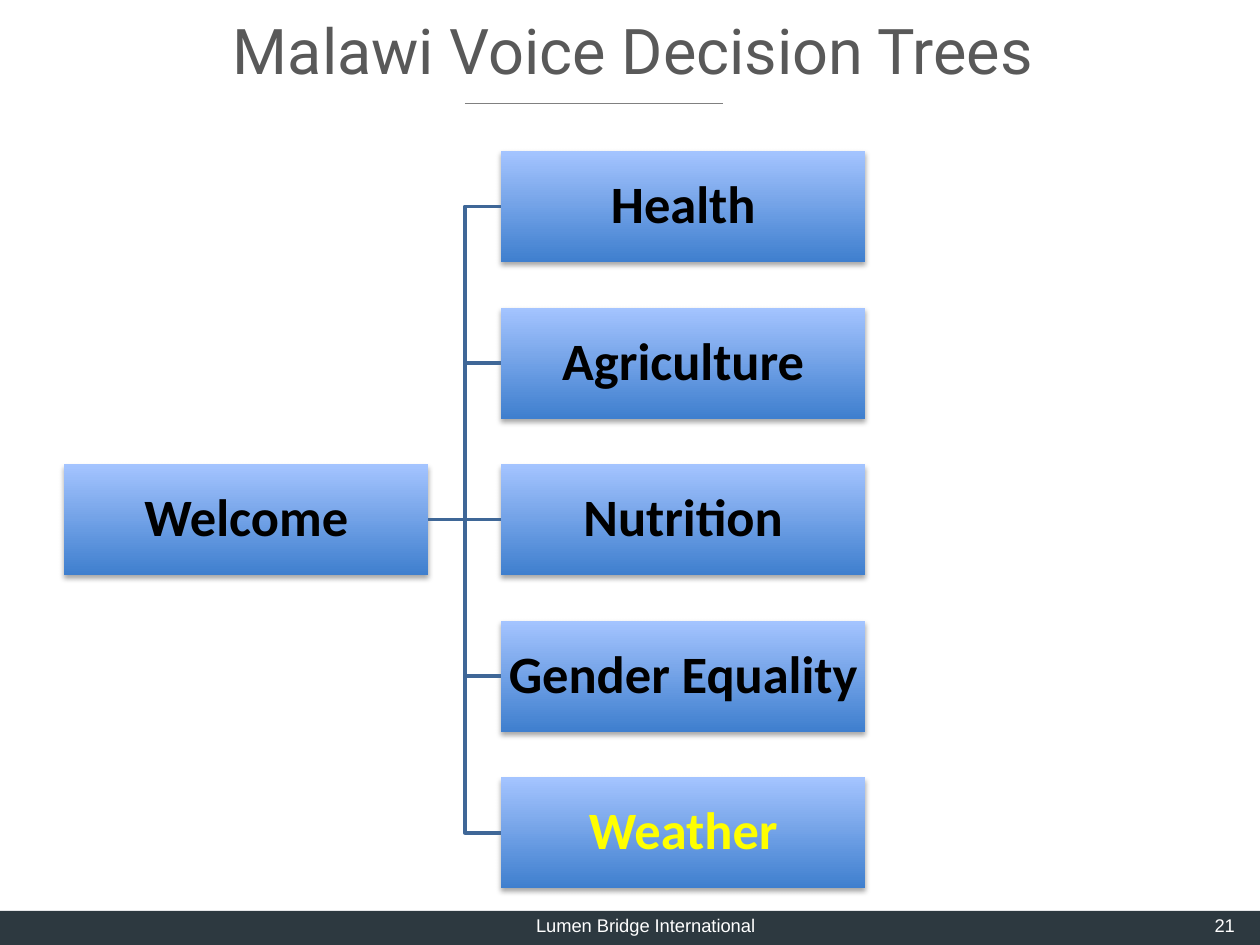
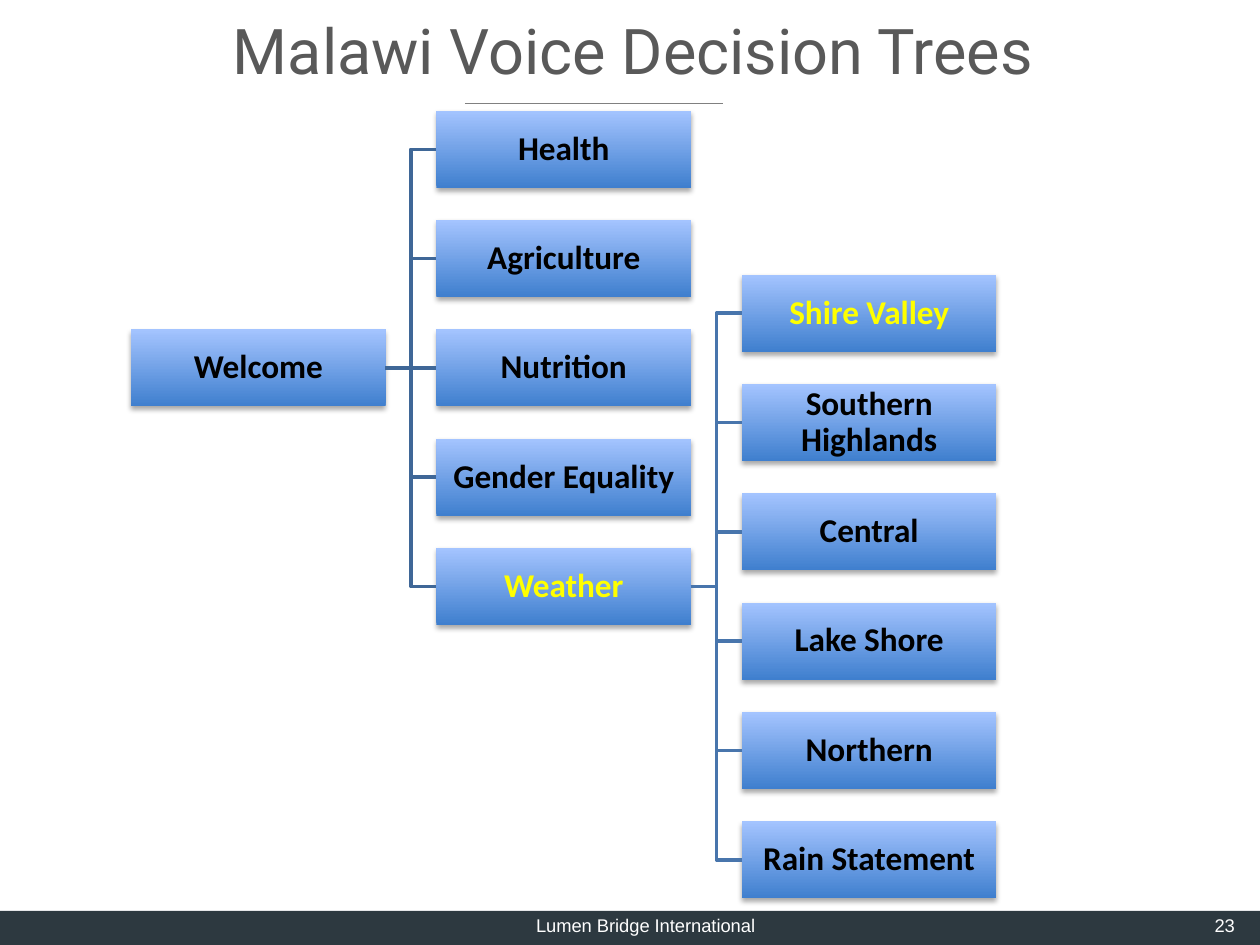
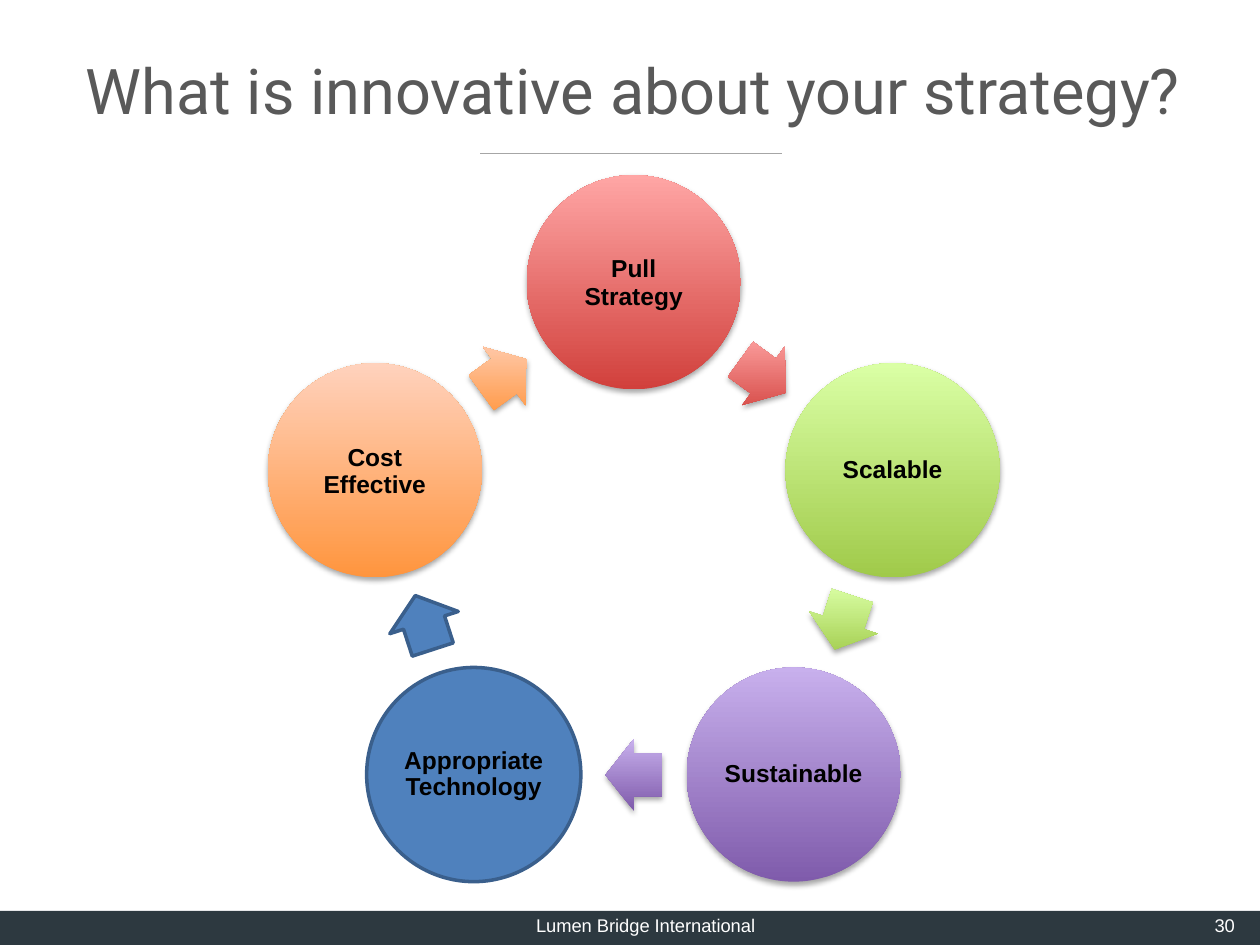
from dataclasses import dataclass
from math import cos, radians, sin

from lxml.etree import SubElement
from pptx import Presentation
from pptx.dml.color import RGBColor
from pptx.enum.shapes import MSO_CONNECTOR, MSO_SHAPE
from pptx.enum.text import MSO_ANCHOR, PP_ALIGN
from pptx.oxml.ns import qn
from pptx.util import Inches, Pt


@dataclass(frozen=True)
class Theme:
    band: str = "2D3940"
    title: str = "595959"
    light: str = "FFFFFF"
    dark: str = "000000"
    highlight: str = "FFFF00"
    tree_rule: str = "808080"
    cycle_rule: str = "A6A6A6"
    root_line: str = "3F6797"
    branch_line: str = "4875AC"
    circle_line: str = "3A5F8C"
    # Gradients run from the bottom colour to the top colour
    blue: tuple = ("3F7FCE", "A4C4FF")
    red: tuple = ("D1403C", "FFA6A5")
    green: tuple = ("A0CA4A", "DAFFA5")
    purple: tuple = ("7F5BAB", "C8B0ED")
    orange: tuple = ("FF953E", "FFD2BD")
    flat_blue: str = "4F81BD"
    title_font: str = "Roboto"
    node_font: str = "Calibri"
    body_font: str = "Arial"
    title_size: float = 36
    circle_size: float = 14
    space_size: float = 16
    footer_size: float = 10.5


@dataclass(frozen=True)
class Box:
    left: float
    top: float
    width: float
    height: float

    def lengths(self):
        return [Inches(side) for side in (self.left, self.top, self.width, self.height)]


THEME = Theme()
FOOTER = "Lumen Bridge International"
TREE_TITLE = "Malawi Voice Decision Trees"
TOPICS = ["Health", "Agriculture", "Nutrition", "Gender Equality", "Weather"]
REGIONS = ["Shire Valley", "Southern Highlands", "Central", "Lake Shore",
           "Northern", "Rain Statement"]
HIGHLIGHTED = {"Weather", "Shire Valley"}
CYCLE = [
    (["Pull", " ", "Strategy"], THEME.red),
    (["Scalable"], THEME.green),
    (["Sustainable"], THEME.purple),
    (["Appropriate Technology"], THEME.flat_blue),
    (["Cost", " ", "Effective"], THEME.orange),
]


def set_all(target, **values):
    for name, value in values.items():
        setattr(target, name, value)


def add_span(para, text, font, size, color, bold=False):
    span = para.add_run()
    span.text = text
    set_all(span.font, name=font, size=Pt(size), bold=bold)
    span.font.color.rgb = RGBColor.from_string(color)


def prepare_para(shape, align=PP_ALIGN.CENTER, anchor=MSO_ANCHOR.TOP,
                 inset=(0, 0.05), spacing=1.0):
    across, down = (Inches(length) for length in inset)
    set_all(shape.text_frame, word_wrap=True, vertical_anchor=anchor,
            margin_left=across, margin_right=across, margin_top=down, margin_bottom=down)
    para = shape.text_frame.paragraphs[0]
    set_all(para, alignment=align, line_spacing=spacing)
    return para


def prepare_figure_para(shape):
    return prepare_para(shape, anchor=MSO_ANCHOR.MIDDLE, inset=(0.02, 0.02), spacing=0.9)


def add_label(page, box, text, font, size, color, **layout):
    para = prepare_para(page.shapes.add_textbox(*box.lengths()), **layout)
    add_span(para, text, font, size, color)


def add_soft_shadow(shape):
    effects = shape._element.spPr.find(qn("a:effectLst"))
    shadow = SubElement(effects, qn("a:outerShdw"), blurRad=str(Pt(3.1)), dist=str(Pt(1.8)),
                        dir="5400000", rotWithShape="0")
    color = SubElement(shadow, qn("a:srgbClr"), val=THEME.dark)
    SubElement(color, qn("a:alpha"), val="35000")


def add_figure(page, kind, box, paint):
    """Add a shape: a pair of colours gives a shaded figure, one colour an outlined one."""
    shape = page.shapes.add_shape(kind, *box.lengths())
    shape.shadow.inherit = False
    if isinstance(paint, tuple):
        shape.fill.gradient()
        shape.fill.gradient_angle = 90
        for stop, color in zip(shape.fill.gradient_stops, paint):
            stop.color.rgb = RGBColor.from_string(color)
        shape._element.spPr.find(qn("a:gradFill")).set("rotWithShape", "0")
        shape.line.fill.background()
        add_soft_shadow(shape)
    else:
        shape.fill.solid()
        shape.fill.fore_color.rgb = RGBColor.from_string(paint)
        shape.line.color.rgb = RGBColor.from_string(THEME.circle_line)
        shape.line.width = Pt(2)
    return shape


def add_line(page, color, width, kind=MSO_CONNECTOR.STRAIGHT, ends=(0, 0, 0, 0)):
    line = page.shapes.add_connector(kind, *(Inches(end) for end in ends))
    line.line.color.rgb = RGBColor.from_string(color)
    line.line.width = Pt(width)
    SubElement(line._element.spPr, qn("a:effectLst"))
    return line


def add_footer(page, box, number):
    band = add_figure(page, MSO_SHAPE.RECTANGLE, box, THEME.band)
    band.line.fill.background()
    style = dict(font=THEME.body_font, size=THEME.footer_size, color=THEME.light)
    top = box.top - 0.02
    add_label(page, Box(box.left + 2.5, top, 5.25, 0.29), FOOTER, **style)
    add_label(page, Box(box.left + 9.08, top, 0.72, 0.29), str(number),
              align=PP_ALIGN.RIGHT, **style)


def add_title(page, box, text, rule_left, rule_width, rule_drop, rule_color):
    add_label(page, box, text, font=THEME.title_font, size=THEME.title_size,
              color=THEME.title, inset=(0.1, 0.05))
    left, top = box.left + rule_left, box.top + rule_drop
    add_line(page, rule_color, 0.75, ends=(left, top, left + rule_width, top))


def add_page(deck, number):
    page = deck.slides.add_slide(deck.slide_layouts[6])
    add_footer(page, Box(0, 7.23, 10, 0.27), number)
    return page


def add_node(page, box, text, size):
    node = add_figure(page, MSO_SHAPE.RECTANGLE, box, THEME.blue)
    color = THEME.highlight if text in HIGHLIGHTED else THEME.dark
    add_span(prepare_figure_para(node), text, THEME.node_font, size, color, bold=True)
    return node


def add_branch(page, parent, parent_box, labels, step, size, color):
    """Stack the children to the right of their parent, centred on it."""
    first_top = parent_box.top - step * (len(labels) - 1) / 2
    left = parent_box.left + 1.2 * parent_box.width
    branch = []
    for row, label in enumerate(labels):
        box = Box(left, first_top + row * step, parent_box.width, parent_box.height)
        node = add_node(page, box, label, size)
        line = add_line(page, color, 2, MSO_CONNECTOR.ELBOW)
        line.begin_connect(parent, 3)
        line.end_connect(node, 1)
        branch.append((node, box))
    return branch


def add_tree(page, box, node_width, node_height, size, regions=()):
    """Draw the topics over the height of the box, and the regions beside the last topic."""
    step = (box.height - node_height) / (len(TOPICS) - 1)
    root_box = Box(box.left, box.top + (box.height - node_height) / 2, node_width, node_height)
    root = add_node(page, root_box, "Welcome", size)
    topics = add_branch(page, root, root_box, TOPICS, step, size, THEME.root_line)
    if regions:
        add_branch(page, *topics[-1], regions, step, size, THEME.branch_line)


def write_circle(circle, words):
    para = prepare_figure_para(circle)
    for word in words:
        if word.isspace():
            add_span(para, word, THEME.node_font, THEME.space_size, THEME.light)
        else:
            add_span(para, word, THEME.body_font, THEME.circle_size, THEME.dark, bold=True)


def add_cycle(page, box, diameter, arrow_width, arrow_height):
    """Set circles clockwise from the top of the box, with an arrow after each."""
    radius, arrow_radius = 2.16, 1.75
    center_x = box.left + box.width / 2
    center_y = box.top + diameter / 2 + radius
    turn = 360 / len(CYCLE)

    def around(angle, distance, width, height):
        x = center_x + distance * sin(radians(angle))
        y = center_y - distance * cos(radians(angle))
        return Box(x - width / 2, y - height / 2, width, height)

    for index, (words, paint) in enumerate(CYCLE):
        angle = index * turn
        circle = add_figure(page, MSO_SHAPE.OVAL, around(angle, radius, diameter, diameter), paint)
        write_circle(circle, words)
        angle += turn / 2
        arrow = add_figure(page, MSO_SHAPE.RIGHT_ARROW,
                           around(angle, arrow_radius, arrow_width, arrow_height), paint)
        arrow.adjustments[0], arrow.adjustments[1] = 0.6, 0.5
        arrow.rotation = angle


def add_tree_page(deck, number, **tree):
    page = add_page(deck, number)
    add_title(page, Box(0, 0.04, 10.05, 1.16), TREE_TITLE, rule_left=3.69,
              rule_width=2.05, rule_drop=0.78, rule_color=THEME.tree_rule)
    add_tree(page, **tree)


def add_cycle_page(deck, number):
    page = add_page(deck, number)
    add_title(page, Box(0, 0.36, 10.05, 1.16), "What is innovative about your strategy?",
              rule_left=3.81, rule_width=2.4, rule_drop=0.86, rule_color=THEME.cycle_rule)
    add_cycle(page, Box(2.12, 1.39, 5.82, 5.6), 1.7, 0.45, 0.57)


def main():
    deck = Presentation()
    set_all(deck, slide_width=Inches(10), slide_height=Inches(7.5))
    add_tree_page(deck, 21, box=Box(0.51, 1.2, 6.35, 5.85),
                  node_width=2.89, node_height=0.88, size=30)
    add_tree_page(deck, 23, box=Box(1.04, 0.88, 6.85, 4.08),
                  node_width=2.02, node_height=0.61, size=19, regions=REGIONS)
    add_cycle_page(deck, 30)
    deck.save("out.pptx")


if __name__ == "__main__":
    main()
